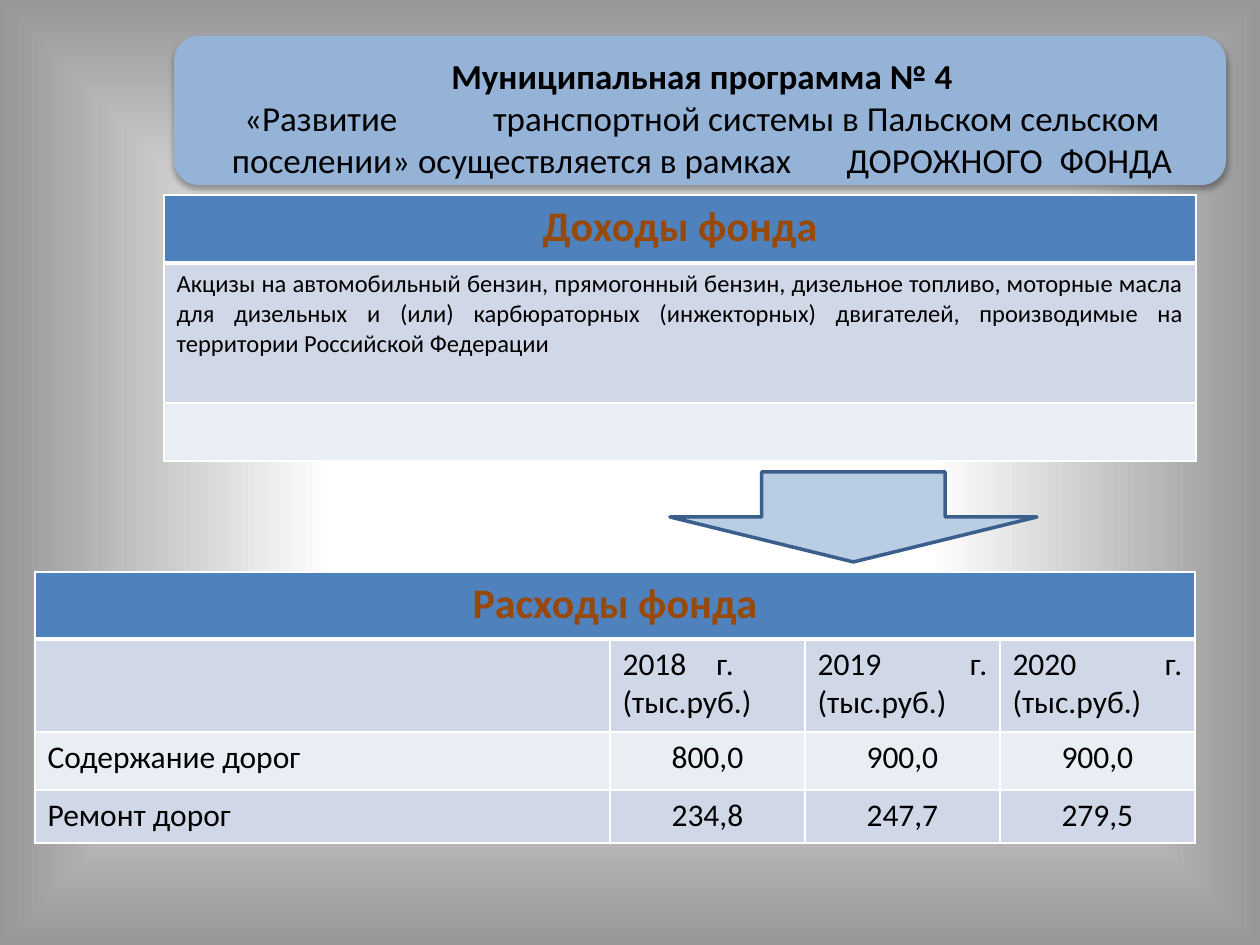
"""Build the slide on the road fund's income and spending."""
from lxml import etree
from pptx import Presentation
from pptx.dml.color import RGBColor
from pptx.enum.shapes import MSO_SHAPE
from pptx.enum.text import MSO_ANCHOR, MSO_AUTO_SIZE, PP_ALIGN
from pptx.oxml import parse_xml
from pptx.oxml.ns import nsdecls
from pptx.util import Pt

PX = 914400 // 126
COLORS = {
    "text": "000000", "heading": "984807", "banner": "95B3D7",
    "header": "4F81BD", "band": "D0D8E8", "light": "E9EDF4",
    "arrow": "B9CDE5", "outline": "3A5F8C", "white": "FFFFFF", "edge": "979797",
}
LEFT, CENTER, JUSTIFY = PP_ALIGN.LEFT, PP_ALIGN.CENTER, PP_ALIGN.JUSTIFY


def rgb(name):
    return RGBColor.from_string(COLORS[name])


def add_text(p, text, size=18, bold=False, color="text", align=LEFT, spacing=0):
    p.alignment = align
    r = p.add_run()
    r.text = text
    r.font.name = "Calibri"
    r.font.size = Pt(size)
    r.font.bold = bold
    r.font.color.rgb = rgb(color)
    if spacing:
        r.font._element.set("spc", str(spacing * 100))


prs = Presentation()
prs.slide_width, prs.slide_height = 1260 * PX, 945 * PX
s = prs.slides.add_slide(prs.slide_layouts[5])

s.background.fill.solid()
bg = s.background._cSld.bg.bgPr
bg.replace(bg[0], parse_xml(
    f'<a:gradFill {nsdecls("a")} rotWithShape="1"><a:gsLst>'
    f'<a:gs pos="30000"><a:srgbClr val="{COLORS["white"]}"/></a:gs>'
    f'<a:gs pos="100000"><a:srgbClr val="{COLORS["edge"]}"/></a:gs></a:gsLst>'
    '<a:path path="shape"><a:fillToRect l="50000" t="50000" r="50000" b="50000"/></a:path>'
    '</a:gradFill>'))

banner = s.shapes.add_shape(MSO_SHAPE.ROUNDED_RECTANGLE, 174 * PX, 36 * PX, 1052 * PX, 149 * PX)
banner.fill.solid()
banner.fill.fore_color.rgb = rgb("banner")
banner.line.fill.background()
banner._element.spPr.append(parse_xml(
    f'<a:effectLst {nsdecls("a")}><a:outerShdw blurRad="44450" dist="27940" dir="5400000" '
    f'algn="ctr"><a:srgbClr val="{COLORS["text"]}"><a:alpha val="32000"/></a:srgbClr>'
    '</a:outerShdw></a:effectLst>'))

title = s.shapes.title
title.left, title.top, title.width, title.height = 182 * PX, 43 * PX, 1040 * PX, 149 * PX
s.shapes._spTree.append(title._element)
tf = title.text_frame
tf.word_wrap = True
tf.auto_size = MSO_AUTO_SIZE.NONE
tf.vertical_anchor = MSO_ANCHOR.MIDDLE
add_text(tf.paragraphs[0], "Муниципальная программа № 4", size=20, bold=True, align=CENTER)
p = tf.add_paragraph()
for text, spacing in [
    ("«Развитие", 0), (" ", 50),
    ("транспортной системы в Пальском сельском поселении» осуществляется в рамках", 0),
    (" ", 27), ("ДОРОЖНОГО", 0), (" ", 5), ("ФОНДА", 0),
]:
    add_text(p, text, size=20, align=CENTER, spacing=spacing)

income = [
    ["Доходы фонда"],
    ["Акцизы на автомобильный бензин, прямогонный бензин, дизельное топливо, моторные масла "
     "для дизельных и (или) карбюраторных (инжекторных) двигателей, производимые на "
     "территории Российской Федерации"],
    [""],
]
spending = [
    ["Расходы фонда", "", "", ""],
    ["", "", "2019 г. (тыс.руб.)", "2020 г. (тыс.руб.)"],
    ["Содержание дорог", "800,0", "900,0", "900,0"],
    ["Ремонт дорог", "234,8", "247,7", "279,5"],
]
for rows, left, top, widths, heights, size in [
    (income, 164, 195, [1032], [68, 140, 58], 14),
    (spending, 35, 572, [575, 195, 195, 195], [67, 93, 58, 53], 18),
]:
    tbl = s.shapes.add_table(len(rows), len(widths), left * PX, top * PX,
                             sum(widths) * PX, sum(heights) * PX).table
    for col, width in zip(tbl.columns, widths):
        col.width = width * PX
    for i, (row, height) in enumerate(zip(rows, heights)):
        tbl.rows[i].height = height * PX
        for j, text in enumerate(row):
            cell = tbl.cell(i, j)
            tcPr = cell._tc.get_or_add_tcPr()
            for side in "LRTB":
                thick = (i, side) in [(0, "B"), (1, "T")]
                tcPr.append(parse_xml(
                    f'<a:ln{side} {nsdecls("a")} w="{38100 if thick else 12700}"><a:solidFill>'
                    f'<a:srgbClr val="{COLORS["white"]}"/></a:solidFill></a:ln{side}>'))
            cell.fill.solid()
            cell.fill.fore_color.rgb = rgb("header" if i == 0 else "band" if i % 2 else "light")
            p = cell.text_frame.paragraphs[0]
            if text and i == 0:
                add_text(p, text, size=24, bold=True, color="heading", align=CENTER)
            elif text:
                add_text(p, text, size=size, align=CENTER if i > 1 and j else JUSTIFY)
    if len(widths) > 1:
        tbl.cell(0, 0).merge(tbl.cell(0, len(widths) - 1))

p = tbl.cell(1, 1).text_frame.paragraphs[0]
for text, spacing in [("2018", 0), (" ", 13), ("г.", 0)]:
    add_text(p, text, spacing=spacing)
p.add_line_break()
add_text(p, "(тыс.руб.)")

arrow = s.shapes.add_shape(MSO_SHAPE.DOWN_ARROW, 670 * PX, 472 * PX, 367 * PX, 90 * PX)
arrow.shadow.inherit = False
arrow.fill.solid()
arrow.fill.fore_color.rgb = rgb("arrow")
arrow.line.color.rgb = rgb("outline")
arrow.line.width = Pt(2)

prs.save("out.pptx")
